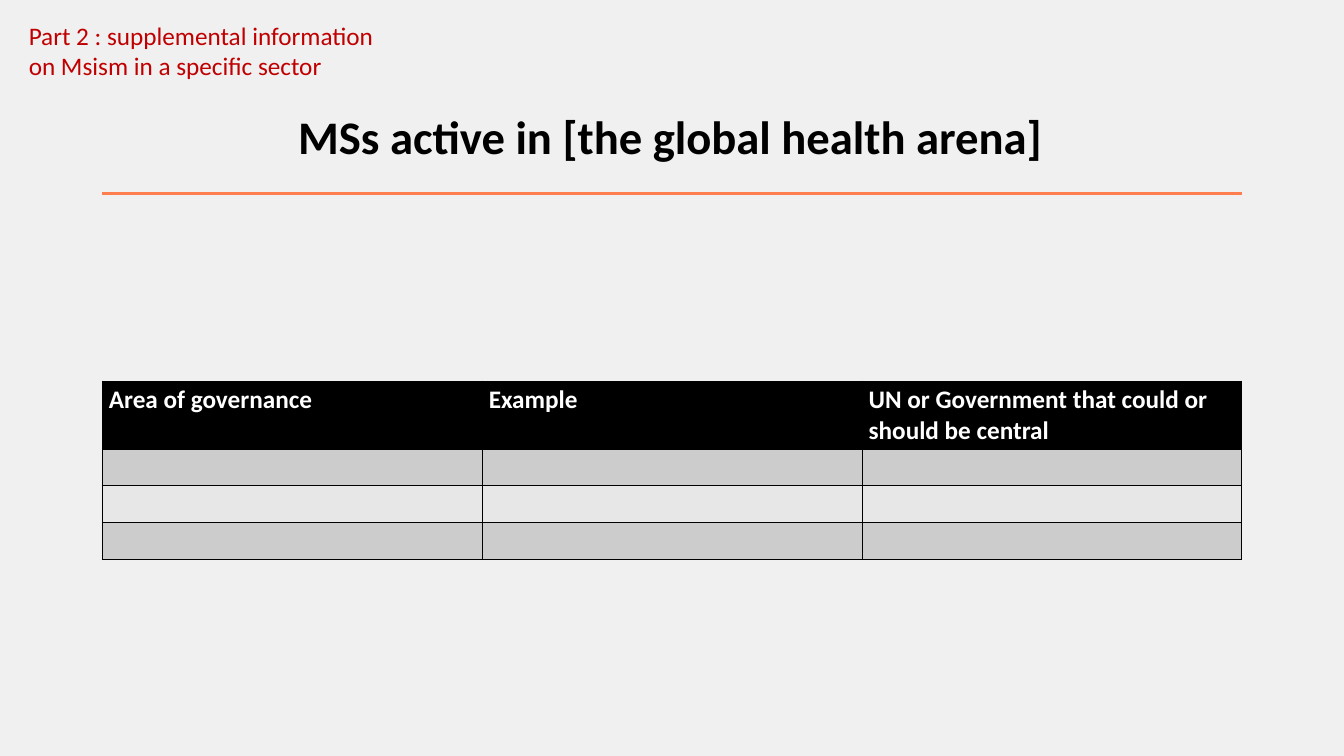
from lxml.etree import SubElement
from pptx import Presentation
from pptx.dml.color import RGBColor
from pptx.enum.shapes import MSO_CONNECTOR
from pptx.enum.text import MSO_ANCHOR, MSO_AUTO_SIZE, PP_ALIGN
from pptx.oxml import parse_xml
from pptx.oxml.ns import nsdecls, qn
from pptx.util import Pt

PAPER = RGBColor(0xF0, 0xF0, 0xF0)
BLACK = RGBColor(0, 0, 0)
WHITE = RGBColor(0xFF, 0xFF, 0xFF)
RED = RGBColor(0xC0, 0, 0)
CORAL = RGBColor(0xFF, 0x7E, 0x50)
DARK = RGBColor(0xCC, 0xCC, 0xCC)
LIGHT = RGBColor(0xE7, 0xE7, 0xE7)

LEFT, WIDTH = 109.44, 1221.12
HEADS = [
    "Area of governance",
    "Example",
    "UN or Government that could or should be central",
]
BANDS = [DARK, LIGHT, DARK]
HEAD_TALL, BAND_TALL = 73, 39.3


def put_text(frame, text, size=27, color=BLACK, bold=False, align=PP_ALIGN.LEFT):
    frame.word_wrap = True
    para = frame.paragraphs[0]
    para.alignment = align
    run = para.add_run()
    run.text = text
    font = run.font
    font.name = "Calibri"
    font.size = Pt(size)
    font.bold = bold
    font.color.rgb = color


def add_title(slide, text):
    title = slide.shapes.title
    title.left, title.top = Pt(108), Pt(111.6)
    title.width, title.height = Pt(WIDTH), Pt(68)
    frame = title.text_frame
    frame.auto_size = MSO_AUTO_SIZE.NONE
    frame.vertical_anchor = MSO_ANCHOR.MIDDLE
    put_text(frame, text, size=50, bold=True, align=PP_ALIGN.CENTER)


def add_note(slide, text):
    box = slide.shapes.add_textbox(Pt(23.76), Pt(18), Pt(396), Pt(72.72))
    put_text(box.text_frame, text, color=RED)


def add_rule(slide, top):
    rule = slide.shapes.add_connector(
        MSO_CONNECTOR.STRAIGHT, Pt(LEFT), Pt(top), Pt(LEFT + WIDTH), Pt(top)
    )
    rule.line.color.rgb = CORAL
    rule.line.width = Pt(4)
    SubElement(rule.element.spPr, qn("a:effectLst"))


def style_cell(cell, fill, base=1):
    cell.fill.solid()
    cell.fill.fore_color.rgb = fill
    props = cell._tc.get_or_add_tcPr()
    widths = {"lnL": 1, "lnR": 1, "lnT": 1, "lnB": base}
    for spot, (tag, width) in enumerate(widths.items()):
        edge = parse_xml(
            f'<a:{tag} {nsdecls("a")} w="{Pt(width)}"><a:solidFill>'
            f'<a:srgbClr val="{BLACK}"/></a:solidFill></a:{tag}>'
        )
        props.insert(spot, edge)


def add_grid(slide, top):
    tall = HEAD_TALL + BAND_TALL * len(BANDS)
    frame = slide.shapes.add_table(
        len(BANDS) + 1, len(HEADS), Pt(LEFT), Pt(top), Pt(WIDTH), Pt(tall)
    )
    table = frame.table
    table.rows[0].height = Pt(HEAD_TALL)
    for col, head in enumerate(HEADS):
        cell = table.cell(0, col)
        style_cell(cell, BLACK, base=3)
        put_text(cell.text_frame, head, color=WHITE, bold=True)
    for row, fill in enumerate(BANDS, 1):
        table.rows[row].height = Pt(BAND_TALL)
        for cell in table.rows[row].cells:
            style_cell(cell, fill)


def main():
    deck = Presentation()
    deck.slide_width, deck.slide_height = Pt(1440), Pt(810)
    slide = deck.slides.add_slide(deck.slide_layouts[5])
    back = slide.background.fill
    back.solid()
    back.fore_color.rgb = PAPER
    add_title(slide, "MSs active in [the global health arena]")
    add_rule(slide, 207.36)
    add_grid(slide, 408.24)
    add_note(slide, "Part 2 : supplemental information on Msism in a specific sector")
    deck.save("out.pptx")


if __name__ == "__main__":
    main()
